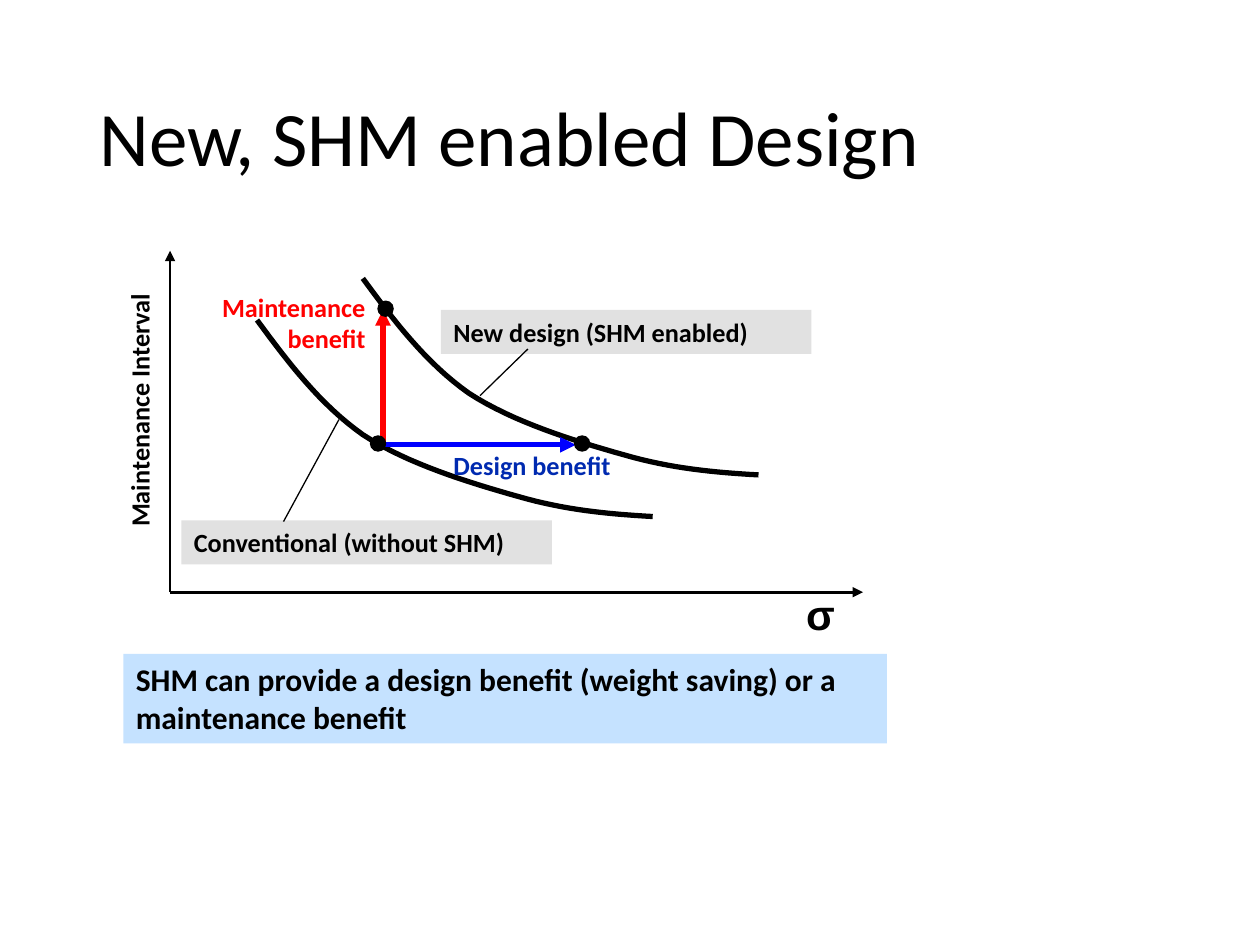
from dataclasses import dataclass
from lxml.etree import SubElement
from pptx import Presentation
from pptx.dml.color import RGBColor
from pptx.enum.shapes import MSO_CONNECTOR, MSO_SHAPE
from pptx.enum.text import MSO_ANCHOR, MSO_AUTO_SIZE, PP_ALIGN
from pptx.oxml.ns import qn
from pptx.util import Inches, Pt

WIDTH, HEIGHT = 10, 7.5
BLACK, RED, BLUE, NAVY = "000000", "FF0000", "0000FF", "002AB0"
GREY, PALE_BLUE = "E1E1E1", "C5E2FF"
CURVE = [(0, 0), (2.5, 3.4), (5, 6.7), (8.4, 9.1), (11.9, 11.4),
         (16.8, 12.9), (20.7, 14), (24.5, 15.1), (27.9, 15.4), (31.4, 15.6)]
CURVE_STEPS = 16


@dataclass
class Grid:
    left: float
    top: float
    width: float
    height: float
    columns: float
    rows: float

    def point(self, column, row):
        return (Inches(self.left + column * self.width / self.columns),
                Inches(self.top + row * self.height / self.rows))

    def area(self, column, row, columns, rows):
        return (*self.point(column, row),
                Inches(columns * self.width / self.columns),
                Inches(rows * self.height / self.rows))


def color(value):
    return RGBColor.from_string(value)


def set_line(shape, value, weight):
    shape.line.color.rgb = color(value)
    shape.line.width = Pt(weight)


def add_label(page, area, text, size=15, ink=BLACK, fill=None, font="Calibri",
              align=PP_ALIGN.LEFT, wrap=True):
    box = page.shapes.add_textbox(*area)
    if fill:
        box.fill.solid()
        box.fill.fore_color.rgb = color(fill)
    frame = box.text_frame
    frame.text = text
    frame.word_wrap = wrap
    frame.auto_size = MSO_AUTO_SIZE.SHAPE_TO_FIT_TEXT
    para = frame.paragraphs[0]
    para.alignment = align
    span = para.runs[0].font
    span.name, span.size, span.bold = font, Pt(size), True
    span.color.rgb = color(ink)
    return box


def add_line(page, start, end, ink=BLACK, weight=0.75, arrow=False):
    line = page.shapes.add_connector(MSO_CONNECTOR.STRAIGHT, *start, *end)
    set_line(line, ink, weight)
    if arrow:
        SubElement(line.line._get_or_add_ln(), qn("a:tailEnd"), type="triangle")
    SubElement(line._element.spPr, qn("a:effectLst"))


def bezier(points, share):
    while len(points) > 1:
        points = [(x1 + (x2 - x1) * share, y1 + (y2 - y1) * share)
                  for (x1, y1), (x2, y2) in zip(points, points[1:])]
    return points[0]


def add_curve(page, grid, column, row):
    points = [grid.point(column + x, row + y)
              for first in range(0, len(CURVE) - 1, 3)
              for x, y in (bezier(CURVE[first:first + 4], step / CURVE_STEPS)
                           for step in range(1, CURVE_STEPS + 1))]
    builder = page.shapes.build_freeform(*grid.point(column, row))
    builder.add_line_segments(points, close=False)
    curve = builder.convert_to_shape()
    curve.shadow.inherit = False
    curve.fill.background()
    set_line(curve, BLACK, 3)


def add_dot(page, grid, column, row, size=1.2):
    area = grid.area(column - size / 2, row - size / 2, size, size)
    dot = page.shapes.add_shape(MSO_SHAPE.OVAL, *area)
    dot.shadow.inherit = False
    dot.fill.solid()
    dot.fill.fore_color.rgb = color(BLACK)
    set_line(dot, BLACK, 0.75)


def add_title(page, area):
    title = page.shapes.title
    title.left, title.top, title.width, title.height = area
    frame = title.text_frame
    frame.text = "New, SHM enabled Design"
    frame.vertical_anchor = MSO_ANCHOR.MIDDLE
    para = frame.paragraphs[0]
    para.alignment = PP_ALIGN.LEFT
    para.line_spacing = 0.9
    span = para.runs[0].font
    span.name, span.size = "Calibri", Pt(44)
    span.color.rgb = color(BLACK)


def add_diagram(page, grid):
    origin = grid.point(0, grid.rows)
    for end in (grid.point(0, 0), grid.point(grid.columns, grid.rows)):
        add_line(page, origin, end, weight=1.5, arrow=True)

    for column, row in ((6.9, 5.5), (15.3, 2.2)):
        add_curve(page, grid, column, row)

    for column, row, ink in ((16.9, 4.7, RED), (32.2, 15.4, BLUE)):
        add_line(page, grid.point(16.9, 15.4), grid.point(column, row), ink, 3, True)

    add_label(page, grid.area(49.5, 26.3, 4.1, 5), "σ", 24, font="Arial",
              align=PP_ALIGN.CENTER, wrap=False)
    interval = add_label(page, grid.area(-12.8, 10.8, 20.7, 3.5),
                         "Maintenance Interval", wrap=False)
    interval.rotation = 270
    add_label(page, grid.area(1.5, 2.7, 15, 6.1), "Maintenance benefit",
              ink=RED, align=PP_ALIGN.RIGHT)
    add_label(page, grid.area(21.5, 15.3, 17.5, 3.5), "Design benefit", ink=NAVY)

    for column, row in ((16.5, 15.3), (32.7, 15.3), (17.1, 4.6)):
        add_dot(page, grid, column, row)

    for column, row, text in ((0.9, 21.4, "Conventional (without SHM)"),
                              (21.5, 4.7, "New design (SHM enabled)")):
        add_label(page, grid.area(column, row, 29.4, 3.5), text, fill=GREY)

    for start, end in (((28.4, 7.8), (24.6, 11.5)), ((13.4, 13.4), (9, 21.5))):
        add_line(page, grid.point(*start), grid.point(*end))


def add_conclusion(page, area):
    add_label(page, area, "SHM can provide a design benefit (weight saving) "
              "or a maintenance benefit", 18, fill=PALE_BLUE)


def main():
    deck = Presentation()
    deck.slide_width, deck.slide_height = Inches(WIDTH), Inches(HEIGHT)
    page = deck.slides.add_slide(deck.slide_layouts[5])
    slide_grid = Grid(0, 0, WIDTH, HEIGHT, 100, 75)
    add_title(page, slide_grid.area(6.9, 4, 86.2, 14.5))
    add_diagram(page, Grid(1.35, 1.99, 5.5, 2.71, 55, 27.1))
    add_conclusion(page, slide_grid.area(9.8, 51.9, 60.6, 7.1))
    deck.save("out.pptx")


if __name__ == "__main__":
    main()
